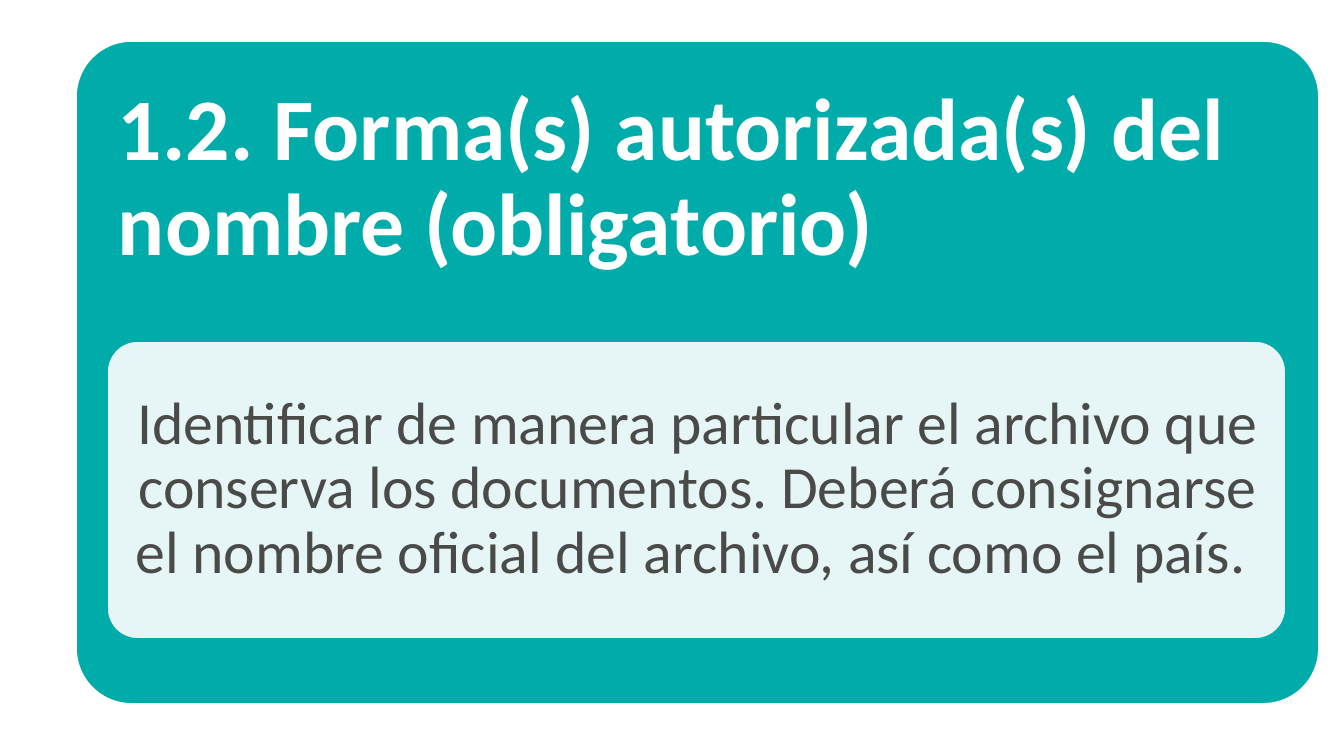
from lxml import etree
from pptx import Presentation
from pptx import util as u
from pptx.dml.color import RGBColor
from pptx.enum import shapes, text
from pptx.oxml.ns import qn

SCALE = 914400 / 134.4
TEAL, WHITE, GREY = "00ACA9", "FFFFFF", "4A4A49"


def px(length):
    return u.Emu(round(length * SCALE))


def color(value):
    return RGBColor.from_string(value)


deck = Presentation()
deck.slide_width, deck.slide_height = px(1344), px(756)
page = deck.slides.add_slide(deck.slide_layouts[1])
title, body = page.placeholders

panels = [
    ((75, 40, 1245, 665), 0.085, TEAL, WHITE),
    ((106, 340, 1181, 300), 0.105, WHITE, TEAL),
]
for place, rounding, fill, line in panels:
    panel = page.shapes.add_shape(
        shapes.MSO_SHAPE.ROUNDED_RECTANGLE, *map(px, place))
    panel.adjustments[0] = rounding
    panel.shadow.inherit = False
    panel.fill.solid()
    panel.fill.fore_color.rgb = color(fill)
    panel.line.color.rgb = color(line)
    panel.line.width = u.Pt(2)

fill_color = panel.fill._xPr.find(qn("a:solidFill"))[0]
etree.SubElement(fill_color, qn("a:alpha"), val="90000")

texts = [
    (title, (91, 58, 1211, 632), (27, 27, 27, 410),
     "1.2. Forma(s) autorizada(s) del nombre (obligatorio)",
     47, True, WHITE, text.PP_ALIGN.LEFT, text.MSO_ANCHOR.TOP),
    (body, (116, 349, 1164, 281), (17, 17, 17, 17),
     "Identificar de manera particular el archivo que conserva los documentos. "
     "Deberá consignarse el nombre oficial del archivo, así como el país. ",
     32, False, GREY, text.PP_ALIGN.CENTER, text.MSO_ANCHOR.MIDDLE),
]
for box, place, insets, words, size, bold, ink, align, anchor in texts:
    page.shapes._spTree.append(box._element)
    box.left, box.top, box.width, box.height = map(px, place)
    frame = box.text_frame
    frame.text = words
    frame.word_wrap = True
    frame.auto_size = text.MSO_AUTO_SIZE.NONE
    frame.vertical_anchor = anchor
    (frame.margin_left, frame.margin_top,
     frame.margin_right, frame.margin_bottom) = map(px, insets)
    para = frame.paragraphs[0]
    para.alignment = align
    para.line_spacing = 0.9
    para.space_before = u.Pt(0)
    props = para._p.get_or_add_pPr()
    props.set("marL", "0")
    props.set("indent", "0")
    etree.SubElement(props, qn("a:buNone"))
    para.font.name = "Calibri"
    para.font.size = u.Pt(size)
    para.font.bold = bold
    para.font.color.rgb = color(ink)

deck.save("out.pptx")
